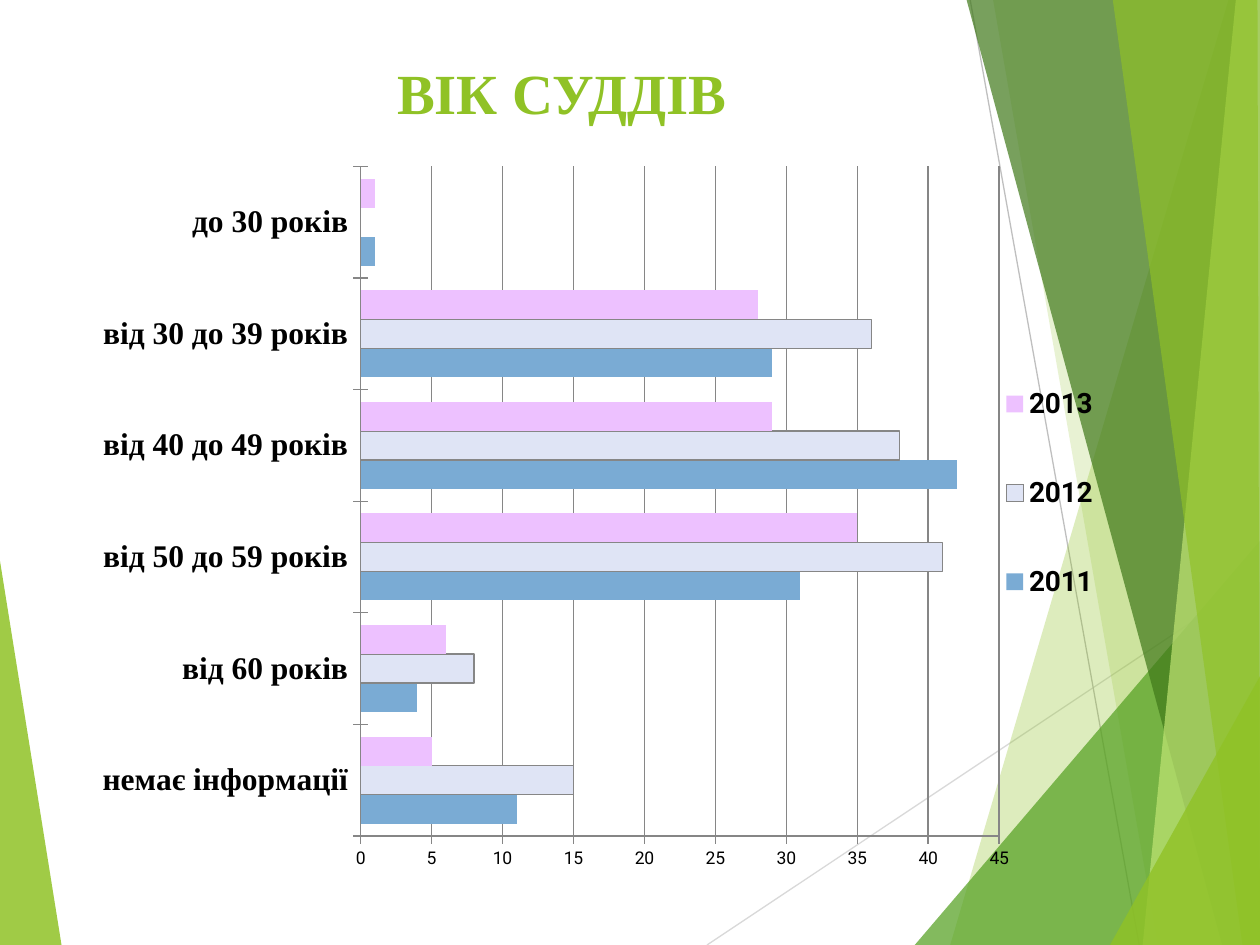
import pptx
import pptx.chart.data
import pptx.dml.color
import pptx.enum.chart
import pptx.enum.shapes
import pptx.enum.text
import pptx.oxml
import pptx.oxml.ns
import pptx.util
from lxml import etree

Pt = pptx.util.Pt
qn = pptx.oxml.ns.qn

GREEN = "90C226"
GREY = "868686"
SERIF = "Times New Roman"
AGES = ["немає інформації", "від 60 років", "від 50 до 59 років",
        "від 40 до 49 років", "від 30 до 39 років", "до 30 років"]
YEARS = [
    ("2011", [11, 4, 31, 42, 29, 1], "7AABD4", None),
    ("2012", [15, 8, 41, 38, 36, 0], "DFE4F5", GREY),
    ("2013", [5, 6, 35, 29, 28, 1], "EDC1FF", None),
]
FACETS = [
    ([(302, 0), (143, 540), (321.4, 540.7), (320.7, 0)], GREEN, 30),
    ([(167.4, -0.7), (261.7, 540), (320.7, 540), (320.7, -0.7)], GREEN, 20),
    ([(122.7, 540), (320, 309), (320.7, 540)], "54A021", 72),
    ([(152.2, -0.7), (298.4, 540), (320.7, 540), (320.7, -0.7)], "3F7819", 70),
    ([(306.3, -0.7), (253, 540), (320.7, 540), (320, -0.7)], "C0E474", 70),
    ([(235.8, -0.7), (310, 540), (320, 540), (318.6, -0.7)], GREEN, 65),
    ([(234.3, 540), (320.7, 385.2), (320.7, 540)], GREEN, 80),
]
RAYS = [((4, 540), (320.7, 329), "D9D9D9"), ((154.4, 0), (251, 540), "BFBFBF")]


def colour(value):
    """Return the colour of a hex string."""
    return pptx.dml.color.RGBColor.from_string(value)


def style_font(font, size, name, bold=False, shade="000000"):
    """Set the face, size, weight and colour of a font."""
    font.name, font.size, font.bold = name, Pt(size), bold
    font.color.rgb = colour(shade)


def style_line(line, shade):
    """Give a line its colour and the common width."""
    line.color.rgb = colour(shade)
    line.width = Pt(0.75)


def draw_facet(page, box, points, shade, opacity):
    """Draw one translucent polygon relative to the box."""
    left, top = box[:2]
    corners = [(Pt(left + x), Pt(top + y)) for x, y in points]
    builder = page.shapes.build_freeform(*corners[0], scale=1.0)
    builder.add_line_segments(corners[1:], close=True)
    facet = builder.convert_to_shape()
    facet.shadow.inherit = False
    facet.fill.solid()
    facet.fill.fore_color.rgb = colour(shade)
    facet.line.fill.background()
    tint = facet._element.spPr.find(qn("a:solidFill")).find(qn("a:srgbClr"))
    etree.SubElement(tint, qn("a:alpha")).set("val", str(opacity * 1000))


def draw_ray(page, box, start, end, shade):
    """Draw one thin line relative to the box."""
    left, top = box[:2]
    ray = page.shapes.add_connector(
        pptx.enum.shapes.MSO_CONNECTOR.STRAIGHT,
        Pt(left + start[0]), Pt(top + start[1]), Pt(left + end[0]), Pt(top + end[1]))
    style_line(ray.line, shade)
    etree.SubElement(ray._element.spPr, qn("a:effectLst"))


def draw_left_wedge(page, box):
    """Draw the wedge in the lower left corner."""
    width, height = box[2:]
    draw_facet(page, box, [(0, 0), (width, height), (0, height)], GREEN, 85)


def draw_right_facets(page, box):
    """Draw the rays and the overlapping facets on the right."""
    for ray in RAYS:
        draw_ray(page, box, *ray)
    for facet in FACETS:
        draw_facet(page, box, *facet)


def draw_title(page, box):
    """Write the centred heading."""
    frame = page.shapes.add_textbox(*map(Pt, box)).text_frame
    frame.word_wrap = True
    frame.margin_top, frame.margin_bottom = Pt(8), 0
    frame.vertical_anchor = pptx.enum.text.MSO_ANCHOR.TOP
    para = frame.paragraphs[0]
    para.text = "ВІК СУДДІВ"
    para.alignment = pptx.enum.text.PP_ALIGN.CENTER
    style_font(para.font, 32.4, SERIF, True, GREEN)


def set_layout(parent, before, inner, **place):
    """Fix the place of a chart part as fractions of the chart."""
    for old in parent.findall(qn("c:layout")):
        parent.remove(old)
    layout = etree.Element(qn("c:layout"))
    manual = etree.SubElement(layout, qn("c:manualLayout"))
    target = {"layoutTarget": "inner"} if inner else {}
    for tag, value in {**target, "xMode": "edge", "yMode": "edge", **place}.items():
        etree.SubElement(manual, qn("c:" + tag)).set("val", str(value))
    parent.find(qn(before)).addprevious(layout)


def draw_chart(page, box):
    """Draw the bars of judges by age group and year."""
    kinds = pptx.enum.chart
    data = pptx.chart.data.CategoryChartData()
    data.categories = AGES
    for name, values, _, _ in YEARS:
        data.add_series(name, values)
    chart = page.shapes.add_chart(
        kinds.XL_CHART_TYPE.BAR_CLUSTERED, *map(Pt, box), data).chart
    chart.has_title = False
    style_font(chart.font, 10, "Roboto")

    plot = chart.plots[0]
    plot.gap_width, plot.overlap, plot.vary_by_categories = 85, 0, False
    for series, (_, _, shade, outline) in zip(plot.series, YEARS):
        series.format.fill.solid()
        series.format.fill.fore_color.rgb = colour(shade)
        if outline:
            style_line(series.format.line, outline)
        else:
            series.format.line.fill.background()

    for axis in (chart.category_axis, chart.value_axis):
        axis.major_tick_mark = kinds.XL_TICK_MARK.CROSS
        style_line(axis.format.line, GREY)
    style_font(chart.category_axis.tick_labels.font, 18, SERIF, True)
    scale = chart.value_axis
    scale.minimum_scale, scale.maximum_scale, scale.major_unit = 0, 45, 5
    scale.has_major_gridlines = True
    style_line(scale.major_gridlines.format.line, GREY)

    chart.has_legend = True
    legend = chart.legend
    legend.position = kinds.XL_LEGEND_POSITION.RIGHT
    legend.include_in_layout = False
    style_font(legend.font, 16, "Roboto", True)
    set_layout(legend._element, "c:overlay", False, x=0.89, y=0.26, w=0.1, h=0.43)
    set_layout(chart._chartSpace.chart.plotArea, "c:barChart", True,
               x=0.323, y=0.042, w=0.572, h=0.888)


def main():
    """Build the slide and save it."""
    deck = pptx.Presentation()
    deck.slide_width, deck.slide_height = Pt(720), Pt(540)
    page = deck.slides.add_slide(deck.slide_layouts[6])
    draw_left_wedge(page, (-0.7, 316, 36, 224.7))
    draw_right_facets(page, (400, 0, 320, 540))
    draw_title(page, (36, 25, 570, 41))
    draw_chart(page, (0, 77, 638, 431))
    deck.save("out.pptx")


if __name__ == "__main__":
    main()
